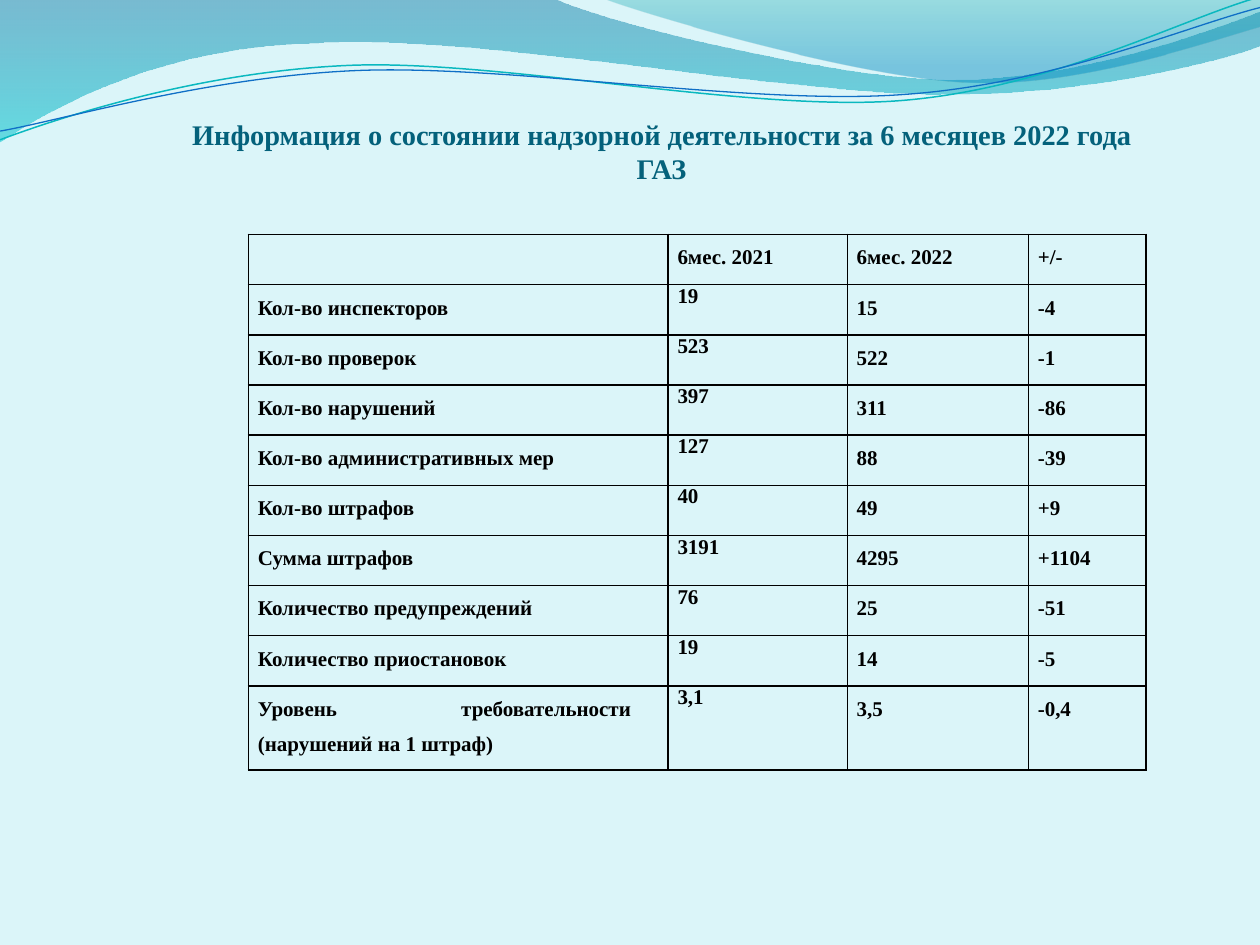
from dataclasses import dataclass

from lxml.etree import SubElement
from pptx import Presentation
from pptx.dml.color import RGBColor
from pptx.enum.text import MSO_ANCHOR as Anchor, MSO_AUTO_SIZE as AutoSize, PP_ALIGN as Align
from pptx.oxml.ns import qn
from pptx.util import Pt

FONT = "Times New Roman"
BACKGROUND = RGBColor(0xDB, 0xF5, 0xF9)
TITLE_COLOR = RGBColor(0x04, 0x61, 0x7B)
BLACK = RGBColor(0, 0, 0)
DEEP_BLUE = RGBColor(0x00, 0x74, 0xA1)
CYAN = RGBColor(0x00, 0xC6, 0xCF)
GREEN = RGBColor(0x00, 0xA1, 0xA9)
BLUE = RGBColor(0x00, 0x8B, 0xBF)
TEAL_LINE = RGBColor(0x0A, 0xB8, 0xBF)
BLUE_LINE = RGBColor(0x0F, 0x6F, 0xC6)
CELL_INSET = 5.4


@dataclass(frozen=True)
class Stop:
    position: float
    color: RGBColor
    opacity: int


@dataclass(frozen=True)
class Wave:
    start: tuple
    segments: tuple
    stops: tuple


@dataclass(frozen=True)
class Ribbon:
    start: tuple
    segments: tuple
    color: RGBColor
    width: float


@dataclass(frozen=True)
class Indicator:
    label: str
    previous: str
    current: str
    change: str
    left_current: bool = False
    label_inset: float = CELL_INSET


WAVES = (
    Wave((0, 0), (
        (316.8, -0.7),
        (342.7, 12.2, 478.1, 45.4, 545.8, 45.4),
        (614.2, 45.4, 689.8, 18.7, 720, 6.5),
        (720.7, 25.9),
        (707.8, 31.7, 626.4, 54.7, 537.1, 54),
        (447.8, 54, 275, 20.2, 185, 24.5),
        (92.9, 25.9, 33.1, 59.8, -0.7, 81.4),
    ), (Stop(0, DEEP_BLUE, 45), Stop(1, CYAN, 55))),
    Wave((344.9, -0.7), (
        (366.5, 7.9, 491, 44.6, 553.7, 46.8),
        (616.3, 49.7, 691.9, 23, 720, 15.1),
        (720, 0),
    ), (Stop(0, GREEN, 30), Stop(0.8, BLUE, 45))),
)
RIBBONS = (
    Ribbon((0, 79.9), (
        (34.6, 67, 113.8, 41, 199.4, 37.4),
        (284.4, 33.8, 427, 64.1, 513.4, 57.6),
        (599.8, 51.1, 675.4, 10.8, 718.6, -1.4),
    ), TEAL_LINE, 0.85),
    Ribbon((0, 74.9), (
        (33.8, 69.1, 118.1, 43.9, 203.8, 40.3),
        (290.2, 36.7, 429.8, 60.5, 516.2, 54),
        (601.9, 48.2, 677.5, 15.1, 720, 4.3),
    ), BLUE_LINE, 0.75),
)
TITLE_LINES = ("Информация о состоянии надзорной деятельности за 6 месяцев 2022 года", "ГАЗ")
HEADINGS = ("", "6мес. 2021", "6мес. 2022", "+/-")
INDICATORS = (
    Indicator("Кол-во инспекторов", "19", "15", "-4"),
    Indicator("Кол-во проверок", "523", "522", "-1"),
    Indicator("Кол-во нарушений", "397", "311", "-86"),
    Indicator("Кол-во административных мер", "127", "88", "-39"),
    Indicator("Кол-во штрафов", "40", "49", "+9"),
    Indicator("Сумма штрафов", "3191", "4295", "+1104"),
    Indicator("Количество предупреждений", "76", "25", "-51", True),
    Indicator("Количество приостановок", "19", "14", "-5", True),
    Indicator("Уровень требовательности (нарушений на 1 штраф)", "3,1", "3,5", "-0,4", True, 21),
)
COLUMN_WIDTHS = (239.8, 102.4, 103.5, 67.1)
ROW_HEIGHT, LAST_ROW_HEIGHT = 28.67, 48


def draw_outline(shapes, start: tuple, segments: tuple, close: bool):
    builder = shapes.build_freeform(Pt(start[0]), Pt(start[1]))
    builder.add_line_segments([(Pt(s[-2]), Pt(s[-1])) for s in segments], close=close)
    outline = builder.convert_to_shape()
    outline.shadow.inherit = False
    sides = list(outline.element.spPr.iter(qn("a:lnTo")))
    for side, segment in zip(sides, segments):
        if len(segment) == 6:
            side.tag = qn("a:cubicBezTo")
            controls = [
                SubElement(side, qn("a:pt"), x=str(Pt(x) - outline.left), y=str(Pt(y) - outline.top))
                for x, y in (segment[:2], segment[2:4])
            ]
            side[:] = controls + [side[0]]
    return outline


def draw_wave(shapes, wave: Wave) -> None:
    outline = draw_outline(shapes, wave.start, wave.segments, True)
    outline.line.fill.background()
    outline.fill.gradient()
    outline.fill.gradient_angle = 270
    for gradient_stop, stop in zip(outline.fill.gradient_stops, wave.stops):
        gradient_stop.position = stop.position
        gradient_stop.color.rgb = stop.color
    colors = outline.element.spPr.iter(qn("a:srgbClr"))
    for color, stop in zip(list(colors), wave.stops):
        SubElement(color, qn("a:alpha"), val=str(stop.opacity * 1000))


def draw_ribbon(shapes, ribbon: Ribbon) -> None:
    outline = draw_outline(shapes, ribbon.start, ribbon.segments, False)
    outline.fill.background()
    outline.line.color.rgb = ribbon.color
    outline.line.width = Pt(ribbon.width)


def add_run(paragraph, text: str, size: float, color: RGBColor) -> None:
    run = paragraph.add_run()
    run.text = text
    run.font.name = FONT
    run.font.size = Pt(size)
    run.font.bold = True
    run.font.color.rgb = color


def write_title(slide) -> None:
    title = slide.shapes.title
    title.left, title.top, title.width, title.height = Pt(54), Pt(66.2), Pt(648), Pt(39.6)
    frame = title.text_frame
    frame.word_wrap = True
    frame.auto_size = AutoSize.NONE
    frame.vertical_anchor = Anchor.BOTTOM
    frame.margin_left = frame.margin_right = frame.margin_bottom = 0
    frame.margin_top = Pt(3.6)
    paragraph = frame.paragraphs[0]
    paragraph.alignment = Align.CENTER
    for index, line in enumerate(TITLE_LINES):
        if index:
            paragraph.add_line_break()
        add_run(paragraph, line, 16.2, TITLE_COLOR)


def fill_cell(cell, text: str, align: Align = Align.JUSTIFY, spacing: float = 1.5,
              right_inset: float = CELL_INSET) -> None:
    properties = cell._tc.get_or_add_tcPr()
    for side in ("lnL", "lnR", "lnT", "lnB"):
        border = SubElement(properties, qn(f"a:{side}"), w=str(Pt(1)))
        SubElement(SubElement(border, qn("a:solidFill")), qn("a:srgbClr"), val=str(BLACK))
    cell.fill.background()
    cell.margin_left, cell.margin_right = Pt(CELL_INSET), Pt(right_inset)
    cell.margin_top = cell.margin_bottom = 0
    if text:
        paragraph = cell.text_frame.paragraphs[0]
        paragraph.alignment = align
        paragraph.line_spacing = spacing
        add_run(paragraph, text, 12, BLACK)


def draw_table(slide) -> None:
    height = ROW_HEIGHT * len(INDICATORS) + LAST_ROW_HEIGHT
    table = slide.shapes.add_table(
        len(INDICATORS) + 1, len(HEADINGS),
        Pt(142), Pt(134), Pt(sum(COLUMN_WIDTHS)), Pt(height),
    ).table
    table.first_row = table.horz_banding = False
    for column, width in zip(table.columns, COLUMN_WIDTHS):
        column.width = Pt(width)
    for row in table.rows:
        row.height = Pt(ROW_HEIGHT)
    table.rows[len(INDICATORS)].height = Pt(LAST_ROW_HEIGHT)
    for column, heading in enumerate(HEADINGS):
        fill_cell(table.cell(0, column), heading)
    for row, item in enumerate(INDICATORS, 1):
        current_align = Align.LEFT if item.left_current else Align.JUSTIFY
        fill_cell(table.cell(row, 0), item.label, right_inset=item.label_inset)
        fill_cell(table.cell(row, 1), item.previous, Align.LEFT, 1.0)
        fill_cell(table.cell(row, 2), item.current, current_align)
        fill_cell(table.cell(row, 3), item.change)


def main() -> None:
    deck = Presentation()
    deck.slide_width, deck.slide_height = Pt(720), Pt(540)
    slide = deck.slides.add_slide(deck.slide_layouts[5])
    slide.background.fill.solid()
    slide.background.fill.fore_color.rgb = BACKGROUND
    for wave in WAVES:
        draw_wave(slide.shapes, wave)
    ribbon_group = slide.shapes.add_group_shape()
    for ribbon in RIBBONS:
        draw_ribbon(ribbon_group.shapes, ribbon)
    write_title(slide)
    draw_table(slide)
    deck.save("out.pptx")


if __name__ == "__main__":
    main()
